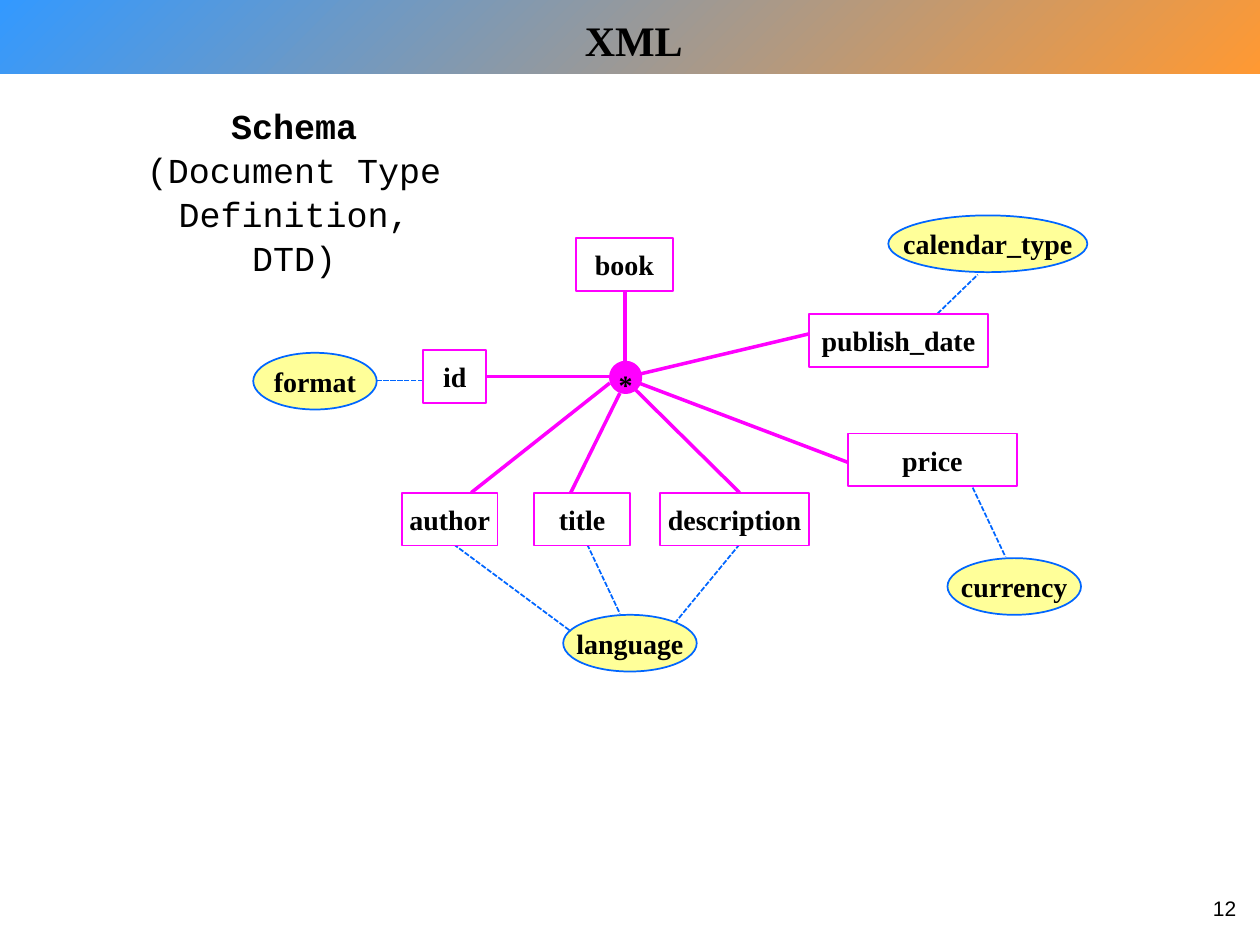
from lxml.etree import SubElement
from pptx import Presentation
from pptx.dml.color import RGBColor
from pptx.enum.dml import MSO_LINE
from pptx.enum.shapes import MSO_CONNECTOR, MSO_SHAPE
from pptx.enum.text import MSO_ANCHOR, PP_ALIGN
from pptx.oxml.ns import qn
from pptx.util import Inches, Pt

BLACK = RGBColor(0x00, 0x00, 0x00)
WHITE = RGBColor(0xFF, 0xFF, 0xFF)
MAGENTA = RGBColor(0xFF, 0x00, 0xFF)
BLUE = RGBColor(0x00, 0x66, 0xFF)
YELLOW = RGBColor(0xFF, 0xFF, 0x99)
SKY = RGBColor(0x33, 0x99, 0xFF)
ORANGE = RGBColor(0xFF, 0x99, 0x33)

# The slide is a grid of 100 columns by 75 rows of square cells
COLS, ROWS = 100, 75
CELL = Inches(0.1)

# Diagram parts in cells, relative to the diagram's box
ELEMENT_H, ATTRIBUTE_H = 4.2, 4.5
ELEMENTS = {  # name: left, top, width
    "book": (25.7, 1.9, 7.7),
    "id": (13.6, 10.8, 5),
    "author": (11.9, 22.1, 7.6),
    "title": (22.4, 22.1, 7.6),
    "description": (32.4, 22.1, 11.8),
    "price": (47.3, 17.4, 13.4),
    "publish_date": (44.2, 7.9, 14.2),
}
ATTRIBUTES = {
    "format": (0.1, 11, 9.8),
    "language": (24.7, 31.8, 10.6),
    "calendar_type": (50.5, 0.1, 15.8),
    "currency": (55.2, 27.3, 10.6),
}
HUB = (28.4, 11.7, 2.5, 2.5)
CHILD_LINKS = [  # from hub to element: x1, y1, x2, y2
    (29.6, 11.9, 29.6, 6),
    (28.9, 12.9, 18.6, 12.9),
    (28.4, 13.4, 17.4, 22.1),
    (29.2, 14.2, 25.3, 22.1),
    (30.2, 13.7, 38.7, 22.1),
    (30.7, 13.4, 47.3, 19.7),
    (30.3, 12.8, 44.2, 9.5),
]
ATTRIBUTE_LINKS = [  # from element to attribute
    (13.6, 13.2, 8.6, 13.2),
    (16, 26.2, 25.3, 33.1),
    (26.6, 26.2, 29.2, 31.7),
    (38.7, 26.2, 33.6, 32.4),
    (54.4, 7.9, 57.6, 4.8),
    (57.2, 21.7, 59.8, 27.2),
]


def cells(*values):
    return [round(v * CELL) for v in values]


def style(p, size, font, bold=False, align=PP_ALIGN.CENTER):
    p.alignment = align
    p.font.size = Pt(size)
    p.font.name = font
    p.font.bold = bold
    p.font.color.rgb = BLACK


def add_node(s, kind, box, text, fill, line):
    sp = s.shapes.add_shape(kind, *cells(*box))
    sp.shadow.inherit = False
    sp.fill.solid()
    sp.fill.fore_color.rgb = fill
    sp.line.color.rgb = line
    sp.line.width = Pt(1)
    tf = sp.text_frame
    tf.word_wrap = False
    tf.vertical_anchor = MSO_ANCHOR.MIDDLE
    p = tf.paragraphs[0]
    p.text = text
    style(p, 16, "Times New Roman", bold=True)
    return sp


def add_link(s, ends, color, width, dash=None):
    line = s.shapes.add_connector(MSO_CONNECTOR.STRAIGHT, *cells(*ends))
    line.line.color.rgb = color
    line.line.width = Pt(width)
    if dash:
        line.line.dash_style = dash
    SubElement(line._element.spPr, qn("a:effectLst"))


def add_text(s, box):
    tf = s.shapes.add_textbox(*cells(*box)).text_frame
    tf.word_wrap = True
    return tf


def add_header(s, x, y, w, h):
    # Gradient band
    band = s.shapes.add_shape(MSO_SHAPE.RECTANGLE, *cells(x, y, w, h))
    band.shadow.inherit = False
    band.line.fill.background()
    band.fill.gradient()
    band.fill.gradient_angle = 315
    for stop, color, position in zip(band.fill.gradient_stops, (SKY, ORANGE), (0, 1)):
        stop.color.rgb = color
        stop.position = position
    # Title, brought in front of the band
    title = s.shapes.title
    title.left, title.top, title.width, title.height = cells(x + 0.3, y + 0.6, w, h - 0.7)
    band._element.addnext(title._element)
    tf = title.text_frame
    tf.vertical_anchor = MSO_ANCHOR.MIDDLE
    p = tf.paragraphs[0]
    p.text = "XML"
    style(p, 24, "Times New Roman", bold=True)


def add_caption(s, *box):
    tf = add_text(s, box)
    for i, text in enumerate(("Schema", "(Document Type", "Definition, DTD)")):
        p = tf.paragraphs[0] if i == 0 else tf.add_paragraph()
        p.text = text
        p.line_spacing = 1.05
        style(p, 20, "Courier New", bold=i == 0)


def add_diagram(s, x, y):
    def shift(ends):
        x1, y1, x2, y2 = ends
        return x + x1, y + y1, x + x2, y + y2

    # Links lie behind the nodes
    for ends in CHILD_LINKS:
        add_link(s, shift(ends), MAGENTA, 2)
    for ends in ATTRIBUTE_LINKS:
        add_link(s, shift(ends), BLUE, 1, MSO_LINE.SQUARE_DOT)

    # Elements and attributes
    for kind, nodes, height, fill, line in (
        (MSO_SHAPE.RECTANGLE, ELEMENTS, ELEMENT_H, WHITE, MAGENTA),
        (MSO_SHAPE.OVAL, ATTRIBUTES, ATTRIBUTE_H, YELLOW, BLUE),
    ):
        for name, (left, top, width) in nodes.items():
            add_node(s, kind, (x + left, y + top, width, height), name, fill, line)

    # Hub
    left, top, width, height = HUB
    hub = add_node(s, MSO_SHAPE.OVAL, (x + left, y + top, width, height), "*", MAGENTA, MAGENTA)
    hub.text_frame.paragraphs[0].line_spacing = 1.4


def add_page_number(s, *box):
    p = add_text(s, box).paragraphs[0]
    p.text = "12"
    style(p, 12, "Arial", align=PP_ALIGN.RIGHT)


def main():
    prs = Presentation()
    prs.slide_width, prs.slide_height = cells(COLS, ROWS)
    s = prs.slides.add_slide(prs.slide_layouts[5])
    add_header(s, 0, 0, COLS, 5.8)
    add_caption(s, 9.4, 7.6, 27.9, 14.2)
    add_diagram(s, 20, 17)
    add_page_number(s, 94.9, 70.6, 4.2, 4)
    prs.save("out.pptx")


if __name__ == "__main__":
    main()
